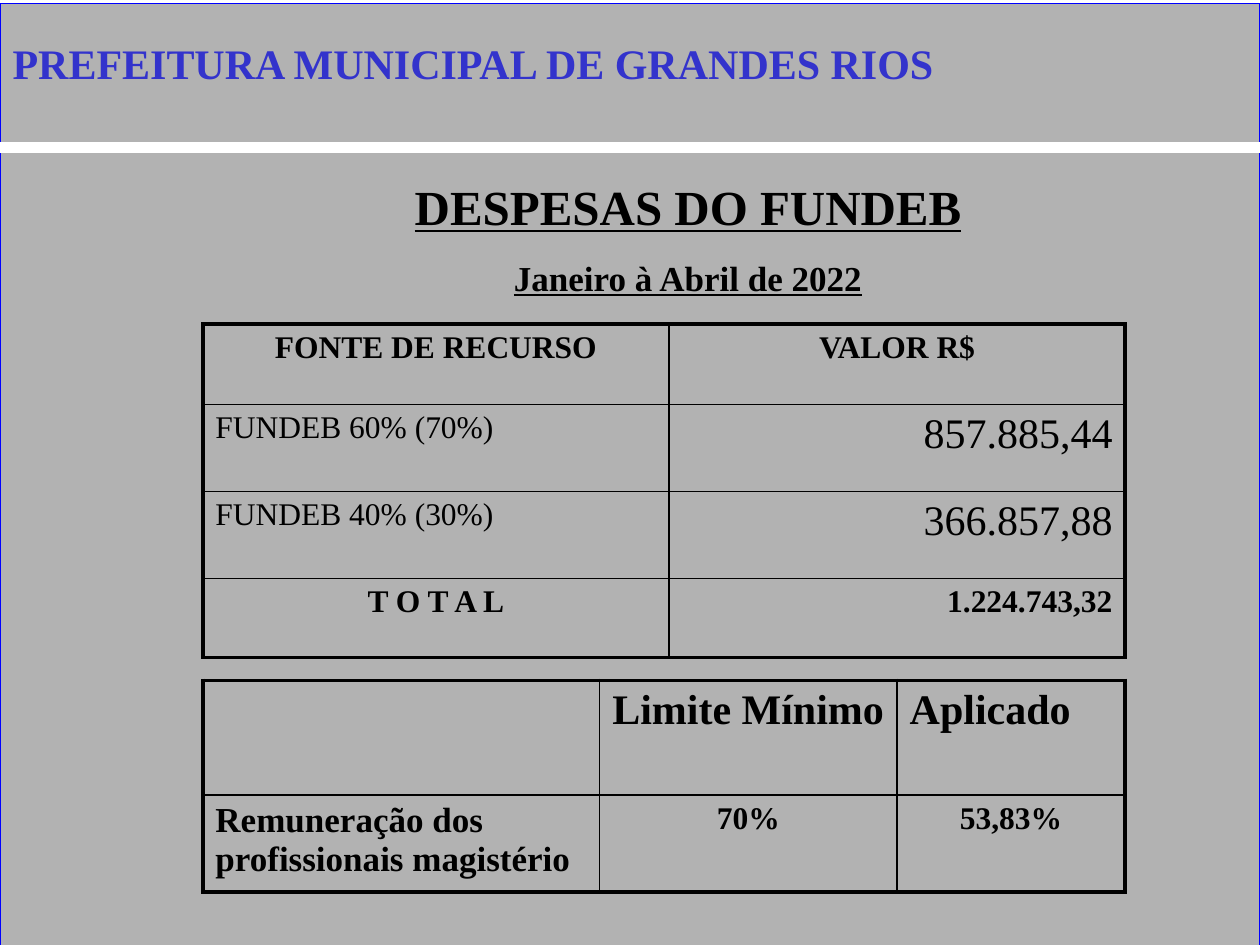
from lxml import etree
from pptx import Presentation
from pptx.dml.color import RGBColor
from pptx.enum.shapes import MSO_CONNECTOR, MSO_SHAPE
from pptx.enum.text import MSO_ANCHOR, PP_ALIGN
from pptx.oxml.ns import qn
from pptx.util import Inches, Pt

LEFT, MID, RIGHT = PP_ALIGN.LEFT, PP_ALIGN.CENTER, PP_ALIGN.RIGHT
TOP = MSO_ANCHOR.TOP
RECT, LINE = MSO_SHAPE.RECTANGLE, MSO_CONNECTOR.STRAIGHT
BLACK = RGBColor(0, 0, 0)
WHITE = RGBColor(255, 255, 255)
GRAY = RGBColor(0xB2, 0xB2, 0xB2)
SHADE = RGBColor(0x80, 0x80, 0x80)
BLUE = RGBColor(0, 0, 255)
NAVY = RGBColor(0x33, 0x33, 0xCC)
FONT = "Times New Roman"
COLS, ROWS = 100, 75
THIN, THICK = 1, 2.25


class Deck:
    """Slide builder on a grid of 100 columns by 75 rows."""

    def __init__(self):
        self.prs = Presentation()
        self.prs.slide_width, self.prs.slide_height = Inches(10), Inches(7.5)
        self.slide = self.prs.slides.add_slide(self.prs.slide_layouts[5])
        self.shapes = self.slide.shapes

    def wide(self, n):
        return round(self.prs.slide_width * n / COLS)

    def high(self, n):
        return round(self.prs.slide_height * n / ROWS)

    def area(self, x, y, w, h):
        return self.wide(x), self.high(y), self.wide(w), self.high(h)

    def run(self, para, text, size, bold=True, under=False, color=BLACK):
        run = para.add_run()
        run.text = text
        font = run.font
        font.name, font.size, font.bold = FONT, Pt(size), bold
        font.underline = under
        font.color.rgb = color
        return run

    def panel(self, box, fill, line):
        shape = self.shapes.add_shape(RECT, *self.area(*box))
        shape.shadow.inherit = False
        shape.fill.solid()
        shape.fill.fore_color.rgb = fill
        shape.line.color.rgb = line
        shape.line.width = Pt(0.75)

    def rule(self, y, color, width):
        line = self.shapes.add_connector(
            LINE, 0, self.high(y), self.wide(COLS), self.high(y))
        line.line.color.rgb = color
        line.line.width = Pt(width)
        etree.SubElement(line._element.spPr, qn("a:effectLst"))

    def title(self, box, text, size, color):
        shape = self.shapes.title
        shape.left, shape.top, shape.width, shape.height = self.area(*box)
        self.shapes._spTree.append(shape._element)
        frame = shape.text_frame
        frame.word_wrap, frame.vertical_anchor = True, TOP
        para = frame.paragraphs[0]
        para.alignment = LEFT
        run = self.run(para, text, size, color=color)
        self.shade(run)

    def shade(self, run):
        fill = run._r.rPr.find(qn("a:solidFill"))
        glow = etree.Element(qn("a:effectLst"))
        drop = etree.SubElement(glow, qn("a:outerShdw"), dist="35921", dir="2700000")
        etree.SubElement(drop, qn("a:srgbClr"), val=str(SHADE))
        fill.addnext(glow)

    def text(self, box, lines, space):
        frame = self.shapes.add_textbox(*self.area(*box)).text_frame
        frame.word_wrap = True
        for i, (text, size) in enumerate(lines):
            para = frame.add_paragraph() if i else frame.paragraphs[0]
            para.alignment, para.line_spacing = MID, space
            self.run(para, text, size, under=True)

    def edge(self, cell, sides):
        props = cell._tc.get_or_add_tcPr()
        for i, (side, width) in enumerate(sides.items()):
            line = etree.Element(qn("a:ln" + side), w=str(Pt(width)))
            fill = etree.SubElement(line, qn("a:solidFill"))
            etree.SubElement(fill, qn("a:srgbClr"), val=str(BLACK))
            props.insert(i, line)

    def table(self, x, y, cols, rows, data):
        box = self.area(x, y, sum(cols), sum(rows))
        table = self.shapes.add_table(len(rows), len(cols), *box).table
        table.first_row = table.horz_banding = False
        for col, w in zip(table.columns, cols):
            col.width = self.wide(w)
        for row, h in zip(table.rows, rows):
            row.height = self.high(h)
        for r, line in enumerate(data):
            for c, item in enumerate(line):
                cell = table.cell(r, c)
                cell.fill.background()
                ends = {"L": c == 0, "R": c == len(cols) - 1,
                        "T": r == 0, "B": r == len(rows) - 1}
                self.edge(cell, {k: THICK if v else THIN for k, v in ends.items()})
                if item:
                    text, size, align, bold = item
                    para = cell.text_frame.paragraphs[0]
                    para.alignment = align
                    self.run(para, text, size, bold)


def main():
    deck = Deck()
    deck.panel((0, 0.3, COLS, ROWS), GRAY, BLUE)
    deck.rule(11.7, WHITE, 6)
    deck.text((14.2, 11.2, 80.8, 55.1),
              [("DESPESAS DO FUNDEB", 28), ("Janeiro à Abril de 2022", 20)], 1.5)
    deck.table(16.1, 25.7, (37, 36.2), (6.4, 6.9, 6.9, 6.3), [
        [("FONTE DE RECURSO", 18, MID, True), ("VALOR R$", 18, MID, True)],
        [("FUNDEB 60% (70%)", 18, LEFT, False), ("857.885,44", 24, RIGHT, False)],
        [("FUNDEB 40% (30%)", 18, LEFT, False), ("366.857,88", 24, RIGHT, False)],
        [("T O T A L", 18, MID, True), ("1.224.743,32", 18, RIGHT, True)],
    ])
    deck.table(16.1, 54, (31.5, 23.6, 18.1), (9.1, 7.7), [
        [None, ("Limite Mínimo", 24, LEFT, True), ("Aplicado", 24, LEFT, True)],
        [("Remuneração dos profissionais magistério", 20, LEFT, True),
         ("70%", 18, MID, True), ("53,83%", 18, MID, True)],
    ])
    deck.title((0, 2.5, 94.9, 5), "PREFEITURA MUNICIPAL DE GRANDES RIOS", 24, NAVY)
    deck.prs.save("out.pptx")


if __name__ == "__main__":
    main()
